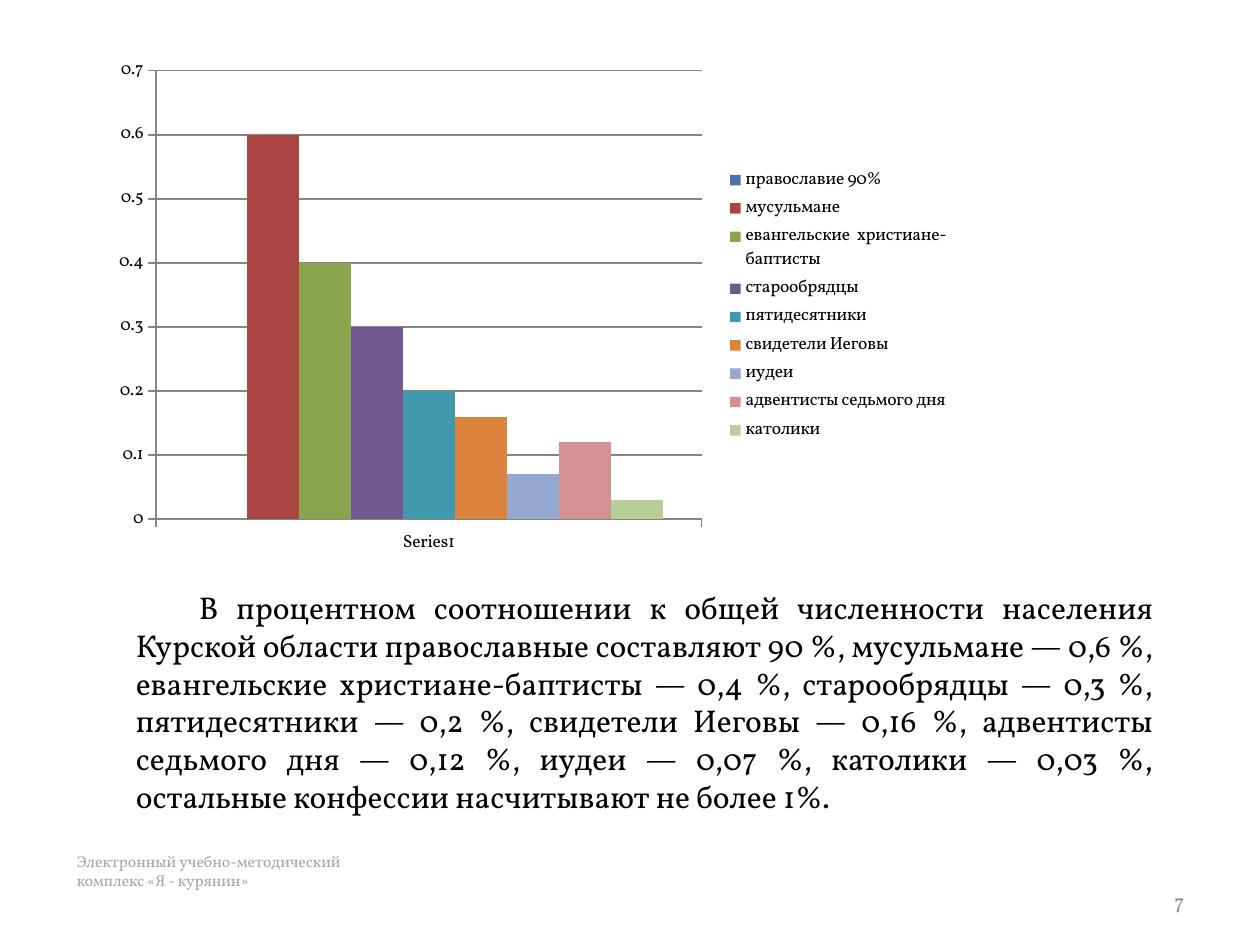
import pptx
import pptx.chart.data
import pptx.dml.color
import pptx.enum.chart
import pptx.enum.text
import pptx.oxml
import pptx.oxml.ns
import pptx.util

Cm = pptx.util.Cm
Pt = pptx.util.Pt
RGBColor = pptx.dml.color.RGBColor
Align = pptx.enum.text.PP_ALIGN
Anchor = pptx.enum.text.MSO_ANCHOR

FONT = "Vollkorn"
BLACK = RGBColor(0x00, 0x00, 0x00)
FOOTER_GRAY = RGBColor(0xA6, 0xA6, 0xA6)
NUMBER_GRAY = RGBColor(0x8C, 0x8C, 0x8C)
AXIS_GRAY = RGBColor(0x86, 0x86, 0x86)

CONFESSIONS = [
    ("православие 90%", None, RGBColor(0x45, 0x72, 0xA7)),
    ("мусульмане", 0.6, RGBColor(0xAA, 0x46, 0x43)),
    ("евангельские  христиане-баптисты", 0.4, RGBColor(0x89, 0xA5, 0x4E)),
    ("старообрядцы", 0.3, RGBColor(0x71, 0x58, 0x8F)),
    ("пятидесятники", 0.2, RGBColor(0x41, 0x98, 0xAF)),
    ("свидетели Иеговы", 0.16, RGBColor(0xDB, 0x84, 0x3D)),
    ("иудеи", 0.07, RGBColor(0x93, 0xA9, 0xCF)),
    ("адвентисты седьмого дня", 0.12, RGBColor(0xD1, 0x93, 0x92)),
    ("католики", 0.03, RGBColor(0xB9, 0xCD, 0x96)),
]

SUMMARY = (
    "В процентном соотношении к общей численности населения Курской области "
    "православные составляют 90 %, мусульмане — 0,6 %, евангельские "
    "христиане-баптисты — 0,4 %, старообрядцы — 0,3 %, пятидесятники — 0,2 %, "
    "свидетели Иеговы — 0,16 %, адвентисты седьмого дня — 0,12 %, "
    "иудеи — 0,07 %, католики — 0,03 %, остальные конфессии насчитывают "
    "не более 1%."
)

# text, (left, top, width, height) in cm, size, colour, alignment, anchor, indent
TEXTS = [
    ("Электронный учебно-методический\vкомплекс «Я - курянин»",
     (1.3, 17.04, 12.7, 1.02), 9, FOOTER_GRAY, Align.LEFT, Anchor.TOP, 0),
    ("7", (18.21, 17.65, 5.92, 1.02), 12, NUMBER_GRAY, Align.RIGHT, Anchor.MIDDLE, 0),
    (SUMMARY, (2.49, 11.73, 21.01, 4.88), 18, BLACK, Align.JUSTIFY, Anchor.TOP, 1.27),
]


def set_format(target, values):
    for name, value in values.items():
        setattr(target, name, value)


def place_in_chart(element, index, target, box):
    """Give a chart part a fixed place, as fractions of the chart's size."""
    for old_layout in element.findall(pptx.oxml.ns.qn("c:layout")):
        element.remove(old_layout)
    sizes = "".join(f'<c:{key} val="{value}"/>' for key, value in zip("xywh", box))
    element.insert(index, pptx.oxml.parse_xml(
        f'<c:layout {pptx.oxml.ns.nsdecls("c")}><c:manualLayout>{target}'
        f'<c:xMode val="edge"/><c:yMode val="edge"/>{sizes}'
        "</c:manualLayout></c:layout>"))


presentation = pptx.Presentation()
set_format(presentation, {"slide_width": Cm(25.4), "slide_height": Cm(19.05)})
slide = presentation.slides.add_slide(presentation.slide_layouts[6])

for text, box, size, color, alignment, anchor, indent in TEXTS:
    frame = slide.shapes.add_textbox(*map(Cm, box)).text_frame
    set_format(frame, {"word_wrap": True, "vertical_anchor": anchor})
    paragraph = frame.paragraphs[0]
    paragraph.text = text
    paragraph.alignment = alignment
    if indent:
        paragraph._p.get_or_add_pPr().set("indent", str(Cm(indent)))
    for run in paragraph.runs:
        set_format(run.font, {"name": FONT, "size": Pt(size)})
        run.font.color.rgb = color

chart_data = pptx.chart.data.CategoryChartData()
chart_data.categories = ["Series1"]
for name, share, color in CONFESSIONS:
    chart_data.add_series(name, [share])
chart = slide.shapes.add_chart(
    pptx.enum.chart.XL_CHART_TYPE.COLUMN_CLUSTERED,
    Cm(2.11), Cm(0.91), Cm(17.2), Cm(10.39), chart_data).chart
set_format(chart, {"has_title": False, "has_legend": True})
set_format(chart.font, {"name": FONT, "size": Pt(10)})
chart.font.color.rgb = BLACK
set_format(chart.legend, {
    "position": pptx.enum.chart.XL_LEGEND_POSITION.RIGHT,
    "include_in_layout": False,
})

plot = chart.plots[0]
set_format(plot, {"gap_width": 150, "overlap": 0, "vary_by_categories": False})
for series, (name, share, color) in zip(plot.series, CONFESSIONS):
    series.format.fill.solid()
    series.format.fill.fore_color.rgb = color

set_format(chart.value_axis, {
    "minimum_scale": 0, "maximum_scale": 0.7, "major_unit": 0.1,
    "has_major_gridlines": True,
})
set_format(chart.value_axis.tick_labels,
           {"number_format": "General", "number_format_is_linked": False})
for axis in (chart.category_axis, chart.value_axis):
    axis.major_tick_mark = pptx.enum.chart.XL_TICK_MARK.OUTSIDE
for part in (chart.category_axis, chart.value_axis, chart.value_axis.major_gridlines):
    part.format.line.color.rgb = AXIS_GRAY
    part.format.line.width = Pt(0.75)

plot_area = chart._chartSpace.chart.plotArea
place_in_chart(plot_area, 0, '<c:layoutTarget val="inner"/>', (0.06, 0.05, 0.64, 0.87))
place_in_chart(chart.legend._element, 1, "", (0.72, 0.23, 0.28, 0.55))

presentation.save("out.pptx")
